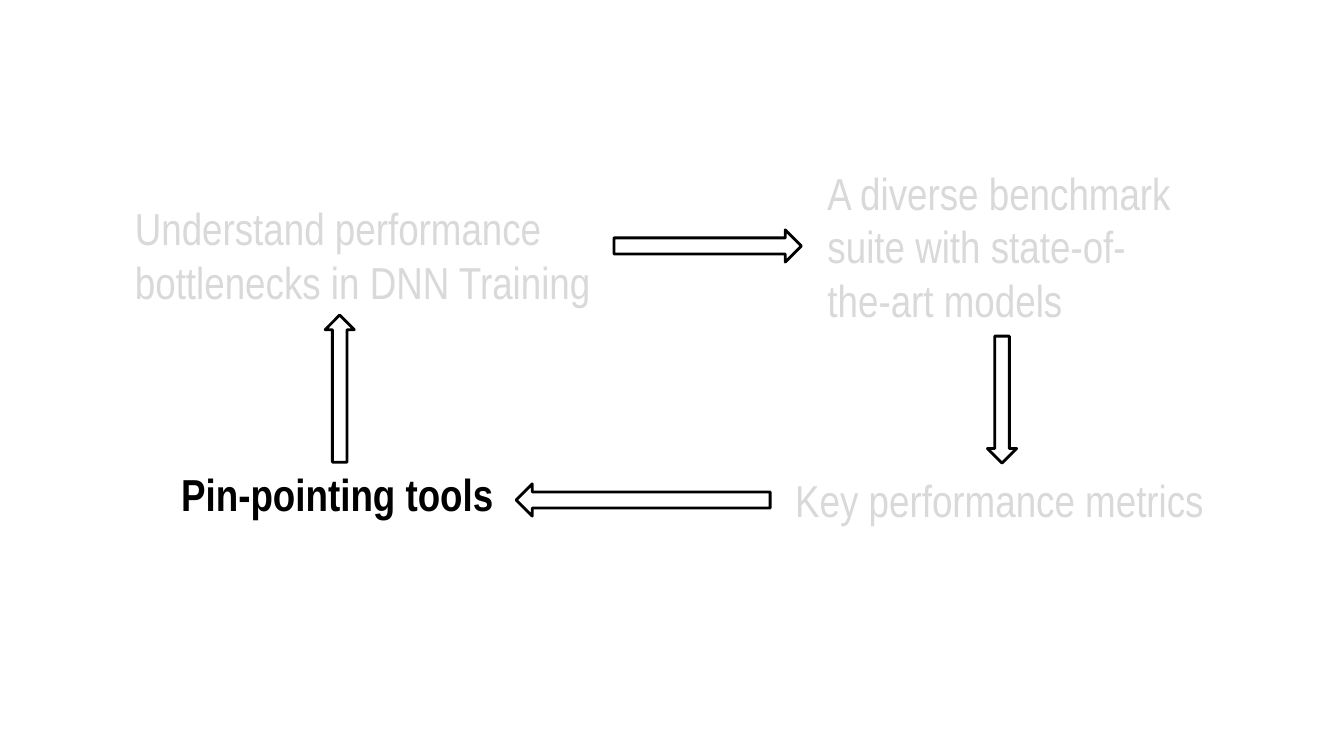
from dataclasses import dataclass

from pptx import Presentation
from pptx.dml.color import RGBColor
from pptx.enum.shapes import MSO_SHAPE
from pptx.enum.text import MSO_AUTO_SIZE
from pptx.slide import Slide
from pptx.util import Inches, Pt

ARROW = MSO_SHAPE.RIGHT_ARROW
GROW = MSO_AUTO_SIZE.SHAPE_TO_FIT_TEXT

WIDE, HIGH = 13.33, 7.5
FONT = "Arial Narrow"
COLORS = {"dim": "D9D9D9", "ink": "000000", "paper": "FFFFFF"}


@dataclass
class Box:
    """Place and size in percent of the slide's width and height."""
    left: float
    top: float
    width: float
    height: float

    def emu(self) -> tuple[int, int, int, int]:
        col, row = WIDE / 100, HIGH / 100
        return (Inches(self.left * col), Inches(self.top * row),
                Inches(self.width * col), Inches(self.height * row))


@dataclass
class Step:
    text: str
    box: Box
    color: str = "dim"
    bold: bool = False


@dataclass
class Link:
    box: Box
    turn: int


# Steps of the cycle, clockwise from top left
STEPS = [
    Step("Understand performance bottlenecks in DNN Training",
         Box(9.3, 25.87, 35.63, 15.73)),
    Step("A diverse benchmark suite with state-of-the-art models",
         Box(60.83, 21.2, 27.45, 22.93)),
    Step("Key performance metrics", Box(58.43, 61.87, 32.25, 8.53)),
    Step("Pin-pointing tools", Box(12.75, 61.07, 25.2, 8.53), "ink", True),
]

# Arrows between steps; each box is given before its turn
LINKS = [
    Link(Box(45.68, 30.4, 13.95, 4.27), 0),
    Link(Box(69.83, 50.93, 9.45, 3.87), 90),
    Link(Box(38.4, 64, 18.9, 4.27), 180),
    Link(Box(19.8, 49.47, 10.95, 3.87), 270),
]


def shade(name: str) -> RGBColor:
    return RGBColor.from_string(COLORS[name])


def add_step(slide: Slide, step: Step) -> None:
    frame = slide.shapes.add_textbox(*step.box.emu()).text_frame
    frame.word_wrap = True
    frame.auto_size = GROW
    run = frame.paragraphs[0].add_run()
    run.text = step.text
    run.font.name = FONT
    run.font.size = Pt(32)
    run.font.bold = step.bold
    run.font.color.rgb = shade(step.color)


def add_link(slide: Slide, link: Link) -> None:
    arrow = slide.shapes.add_shape(ARROW, *link.box.emu())
    arrow.rotation = link.turn
    arrow.shadow.inherit = False
    arrow.fill.solid()
    arrow.fill.fore_color.rgb = shade("paper")
    arrow.line.color.rgb = shade("ink")
    arrow.line.width = Pt(2)


def main() -> None:
    deck = Presentation()
    deck.slide_width, deck.slide_height = Inches(WIDE), Inches(HIGH)
    slide = deck.slides.add_slide(deck.slide_layouts[6])
    for step in STEPS:
        add_step(slide, step)
    for link in LINKS:
        add_link(slide, link)
    deck.save("out.pptx")


if __name__ == "__main__":
    main()
